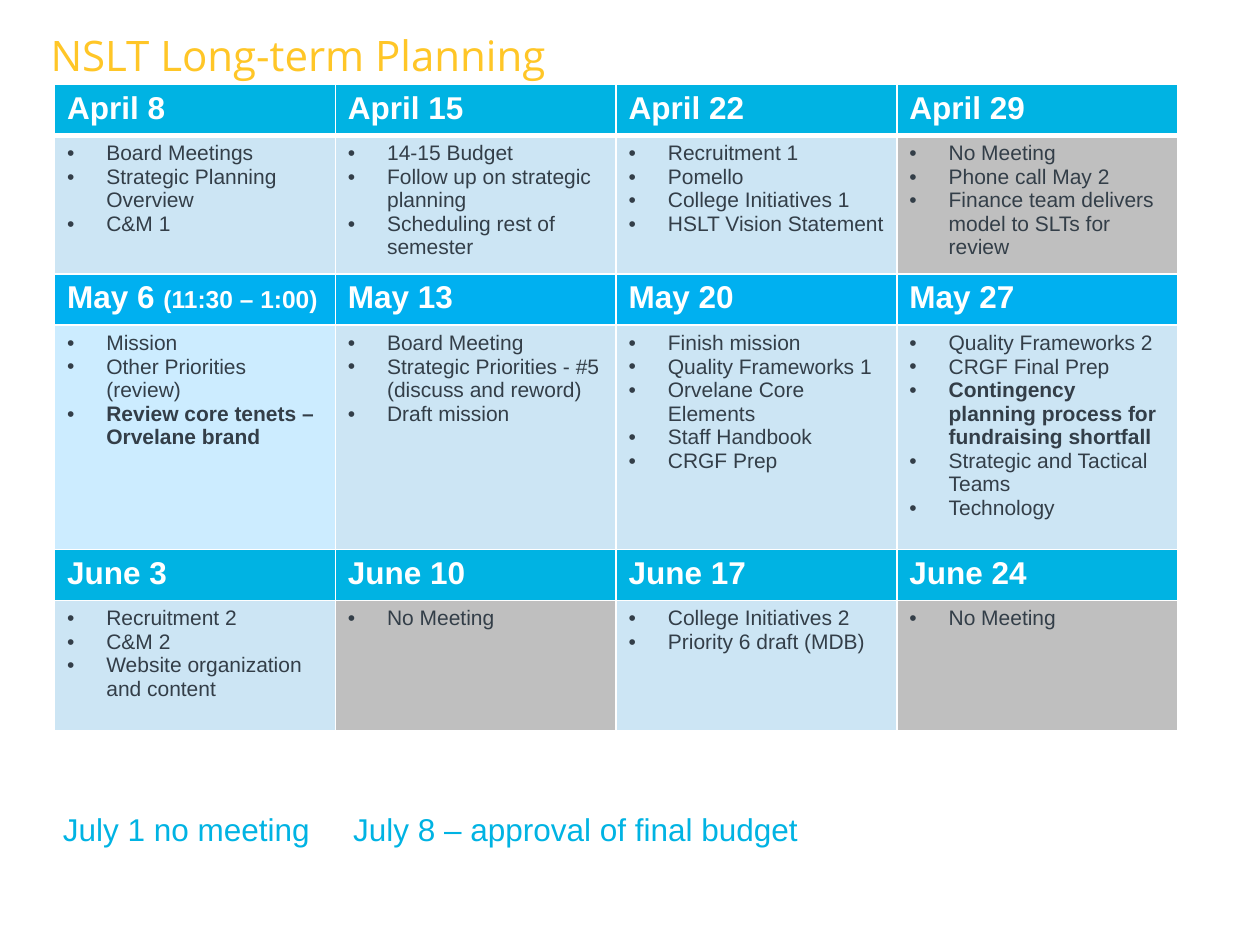
from dataclasses import dataclass

from lxml import etree
from pptx import Presentation, util as u
from pptx.dml.color import RGBColor
from pptx.oxml.ns import qn


@dataclass(frozen=True)
class Theme:
    gold: str = "FFC627"
    cyan: str = "00B3E3"
    blue: str = "00B0F0"
    pale: str = "CCE5F4"
    highlight: str = "CCECFF"
    grey: str = "BFBFBF"
    ink: str = "333E48"
    white: str = "FFFFFF"
    title_font: str = "Open Sans"
    body_font: str = "Arial"
    title_size: int = 24
    heading_size: int = 18
    time_size: int = 14
    body_size: int = 12


THEME = Theme()
BULLET_INDENT = u.Cm(0.79)
COLUMN_WIDTH = u.Cm(5.66)
HEADING_HEIGHT = u.Cm(1.03)

# Each month: heading fill, height of the agenda row, then one entry per week:
# (date, time or "", agenda fill, items); an item starting with * is bold.
MONTHS = [
    (THEME.cyan, u.Cm(2.62), [
        ("April 8", "", THEME.pale,
         ["Board Meetings", "Strategic Planning Overview", "C&M 1"]),
        ("April 15", "", THEME.pale,
         ["14-15 Budget", "Follow up on strategic planning",
          "Scheduling rest of semester"]),
        ("April 22", "", THEME.pale,
         ["Recruitment 1", "Pomello", "College Initiatives 1",
          "HSLT Vision Statement"]),
        ("April 29", "", THEME.grey,
         ["No Meeting", "Phone call May 2",
          "Finance team delivers model to SLTs for review"]),
    ]),
    (THEME.blue, u.Cm(4.52), [
        ("May 6 ", "(11:30 – 1:00)", THEME.highlight,
         ["Mission", "Other Priorities (review)",
          "*Review core tenets – Orvelane brand"]),
        ("May 13", "", THEME.pale,
         ["Board Meeting", "Strategic Priorities - #5 (discuss and reword)",
          "Draft mission"]),
        ("May 20", "", THEME.pale,
         ["Finish mission", "Quality Frameworks 1", "Orvelane Core Elements",
          "Staff Handbook", "CRGF Prep"]),
        ("May 27", "", THEME.pale,
         ["Quality Frameworks 2", "CRGF Final Prep",
          "*Contingency planning process for fundraising shortfall",
          "Strategic and Tactical Teams", "Technology"]),
    ]),
    (THEME.cyan, u.Cm(2.62), [
        ("June 3", "", THEME.pale,
         ["Recruitment 2", "C&M 2", "Website organization and content"]),
        ("June 10", "", THEME.grey, ["No Meeting"]),
        ("June 17", "", THEME.pale,
         ["College Initiatives 2", "Priority 6 draft (MDB)"]),
        ("June 24", "", THEME.grey, ["No Meeting"]),
    ]),
]


def style_font(font, size, color, name=THEME.body_font, bold=False):
    font.size = u.Pt(size)
    font.name = name
    font.bold = bold
    font.color.rgb = RGBColor.from_string(color)


def add_text(page, content, left, top, width, height):
    """Add a wrapped one-paragraph text box; return its frame and paragraph."""
    frame = page.shapes.add_textbox(left, top, width, height).text_frame
    frame.word_wrap = True
    frame.text = content
    return frame, frame.paragraphs[0]


def add_title(page):
    frame, para = add_text(page, "NSLT Long-term Planning",
                           u.Cm(1.02), u.Cm(0.43), u.Cm(23.42), u.Cm(1.7))
    frame.margin_left = 0
    frame.margin_top = u.Cm(0.25)
    para.line_spacing = 0.95
    style_font(para.runs[0].font, THEME.title_size, THEME.gold, THEME.title_font)


def add_july_note(page):
    _, para = add_text(page, "July 1 no meeting\tJuly 8 – approval of final budget",
                       u.Cm(1.02), u.Cm(16.2), u.Cm(23.75), u.Cm(1.02))
    stops = etree.SubElement(para._p.get_or_add_pPr(), qn("a:tabLst"))
    etree.SubElement(stops, qn("a:tab"), pos=str(u.Cm(5.85)), algn="l")
    for span in para.runs:
        style_font(span.font, THEME.heading_size, THEME.cyan)


def paint_cell(cell, color, top=1, bottom=1):
    """Fill a cell and give it white borders, with widths in points."""
    cell.fill.solid()
    cell.fill.fore_color.rgb = RGBColor.from_string(color)
    properties = cell._tc.get_or_add_tcPr()
    sides = {"lnL": 1, "lnR": 1, "lnT": top, "lnB": bottom}
    for index, (side, width) in enumerate(sides.items()):
        line = etree.Element(qn(f"a:{side}"), w=str(u.Pt(width)))
        fill = etree.SubElement(line, qn("a:solidFill"))
        etree.SubElement(fill, qn("a:srgbClr"), val=THEME.white)
        properties.insert(index, line)


def write_heading(cell, date, time):
    para = cell.text_frame.paragraphs[0]
    para.text = date
    style_font(para.runs[0].font, THEME.heading_size, THEME.white, bold=True)
    if time:
        span = para.add_run()
        span.text = time
        style_font(span.font, THEME.time_size, THEME.white, bold=True)


def write_agenda(cell, items):
    cell.text_frame.text = "\n".join(item.lstrip("*") for item in items)
    for para, item in zip(cell.text_frame.paragraphs, items):
        properties = para._p.get_or_add_pPr()
        properties.set("marL", str(BULLET_INDENT))
        properties.set("indent", str(-BULLET_INDENT))
        etree.SubElement(properties, qn("a:buFont"), typeface=THEME.body_font)
        etree.SubElement(properties, qn("a:buChar"), char="•")
        style_font(para.runs[0].font, THEME.body_size, THEME.ink,
                   bold=item.startswith("*"))


def add_calendar(page):
    weeks = len(MONTHS[0][2])
    height = sum(HEADING_HEIGHT + agenda for _, agenda, _ in MONTHS)
    table = page.shapes.add_table(2 * len(MONTHS), weeks, u.Cm(1.1), u.Cm(1.7),
                                  weeks * COLUMN_WIDTH, height).table
    table.horz_banding = False
    for column in table.columns:
        column.width = COLUMN_WIDTH
    for month, (color, agenda_height, entries) in enumerate(MONTHS):
        row = 2 * month
        table.rows[row].height = HEADING_HEIGHT
        table.rows[row + 1].height = agenda_height
        divider = 3 if month == 0 else 1
        for week, (date, time, fill, items) in enumerate(entries):
            heading, agenda = table.cell(row, week), table.cell(row + 1, week)
            paint_cell(heading, color, bottom=divider)
            paint_cell(agenda, fill, top=divider)
            write_heading(heading, date, time)
            write_agenda(agenda, items)


def main():
    deck = Presentation()
    deck.slide_width, deck.slide_height = u.Cm(25.4), u.Cm(19.05)
    page = deck.slides.add_slide(deck.slide_layouts[6])
    add_title(page)
    add_calendar(page)
    add_july_note(page)
    deck.save("out.pptx")


if __name__ == "__main__":
    main()
